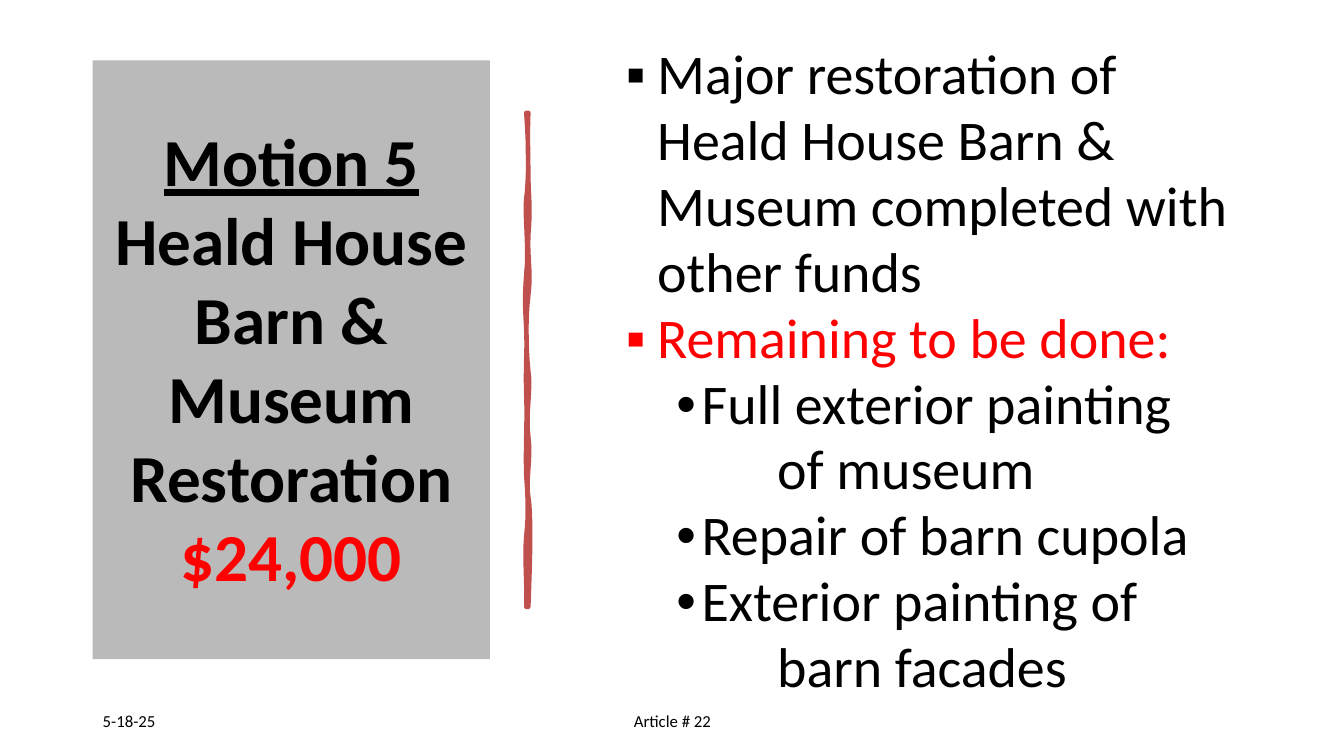
from pptx import Presentation
from pptx.dml.color import RGBColor
from pptx.enum.shapes import MSO_SHAPE as Shape
from pptx.enum.text import MSO_ANCHOR as Anchor, PP_ALIGN as Align
from pptx.oxml.ns import qn
from pptx.util import Inches, Pt
from lxml.etree import SubElement

BLACK, RED, GRAY, BRICK = "000000", "FF0000", "BABABA", "C0504D"


def color(code):
    return RGBColor.from_string(code)


def write(para, text, size=40, ink=BLACK, bold=False, under=False):
    run = para.add_run()
    run.text = text
    font = run.font
    font.name, font.size = "Calibri", Pt(size)
    font.bold, font.underline = bold, under
    font.color.rgb = color(ink)


def curve(start, ends, steps=8):
    points = [start]
    for i in range(0, len(ends), 3):
        a, (b, c, d) = points[-1], ends[i:i + 3]
        for k in range(1, steps + 1):
            t = k / steps
            u = 1 - t
            points.append(tuple(
                u**3 * p + 3 * u * u * t * q + 3 * u * t * t * r + t**3 * s
                for p, q, r, s in zip(a, b, c, d)))
    return points


class Page:
    def __init__(self, slide):
        self.shapes = slide.shapes

    def frame(self, shape):
        frame = shape.text_frame
        frame.word_wrap = True
        frame.vertical_anchor = Anchor.MIDDLE
        return frame

    def text(self, *box):
        return self.frame(self.shapes.add_textbox(*map(Inches, box)))

    def panel(self, *box, fill):
        shape = self.shapes.add_shape(Shape.RECTANGLE, *map(Inches, box))
        shape.shadow.inherit = False
        shape.fill.solid()
        shape.fill.fore_color.rgb = color(fill)
        shape.line.fill.background()
        return self.frame(shape)

    def stroke(self, points, ink, width):
        first, *rest = [(Inches(x), Inches(y)) for x, y in points]
        build = self.shapes.build_freeform(*first)
        build.add_line_segments(rest, close=True)
        shape = build.convert_to_shape()
        shape.shadow.inherit = False
        shape.fill.solid()
        shape.fill.fore_color.rgb = color(ink)
        shape.line.color.rgb = color(ink)
        shape.line.width = Pt(width)

    def items(self, frame, rows):
        for i, (text, mark, left, hang, ink) in enumerate(rows):
            para = frame.add_paragraph() if i else frame.paragraphs[0]
            para.line_spacing = 0.98
            write(para, text, ink=ink)
            props = para._p.get_or_add_pPr()
            props.set("marL", str(Inches(left)))
            props.set("indent", str(Inches(-hang)))
            if mark:
                SubElement(props, qn("a:buFont")).set("typeface", "Arial")
                SubElement(props, qn("a:buChar")).set("char", mark)

    def footer(self, text, left, width, align):
        para = self.text(left, 6.95, width, 0.4).paragraphs[0]
        para.alignment = align
        para.space_after = Pt(6)
        write(para, text, size=12)


def main():
    deck = Presentation()
    deck.slide_width, deck.slide_height = Inches(13.33), Inches(7.5)
    page = Page(deck.slides.add_slide(deck.slide_layouts[6]))

    title = page.panel(0.92, 0.6, 3.94, 5.94, fill=GRAY).paragraphs[0]
    title.alignment = Align.CENTER
    title.line_spacing = 0.98
    write(title, "Motion 5", size=48, bold=True, under=True)
    title.add_line_break()
    write(title, "Heald House Barn & Museum Restoration ", size=48, bold=True)
    write(title, "$24,000", size=48, ink=RED, bold=True)

    right = curve((5.24, 1.12), [
        (5.23, 1.42), (5.24, 1.49), (5.24, 1.77),
        (5.25, 2.06), (5.26, 2.07), (5.24, 2.33),
        (5.23, 2.59), (5.27, 2.69), (5.24, 2.93),
        (5.21, 3.17), (5.22, 3.5), (5.24, 3.68),
        (5.27, 3.86), (5.21, 4.1), (5.24, 4.33),
        (5.27, 4.56), (5.21, 4.76), (5.24, 4.93),
        (5.27, 5.11), (5.26, 5.51), (5.24, 6.02)])
    left = curve((5.22, 6.02), [
        (5.23, 5.84), (5.2, 5.53), (5.22, 5.32),
        (5.24, 5.12), (5.24, 5), (5.22, 4.72),
        (5.21, 4.44), (5.23, 4.22), (5.22, 3.92),
        (5.21, 3.63), (5.23, 3.47), (5.22, 3.27),
        (5.21, 3.07), (5.2, 2.97), (5.22, 2.72),
        (5.25, 2.47), (5.2, 2.12), (5.22, 1.97),
        (5.24, 1.82), (5.25, 1.52), (5.22, 1.12)])
    page.stroke(right + left, BRICK, 3.25)

    square, dot, more = ("▪", 0.81, 0.31), ("•", 1.25, 0.25), ("", 2, 0)
    page.items(page.text(5.61, 0.42, 6.81, 6.53), [
        ("Major restoration of Heald House Barn & Museum "
         "completed with other funds", *square, BLACK),
        ("Remaining to be done:", *square, RED),
        ("Full exterior painting", *dot, BLACK),
        ("of museum", *more, BLACK),
        ("Repair of barn cupola", *dot, BLACK),
        ("Exterior painting of", *dot, BLACK),
        ("barn facades", *more, BLACK)])

    page.footer("5-18-25", 0.92, 3, Align.LEFT)
    page.footer("Article # 22", 4.42, 4.5, Align.CENTER)
    deck.save("out.pptx")


if __name__ == "__main__":
    main()
